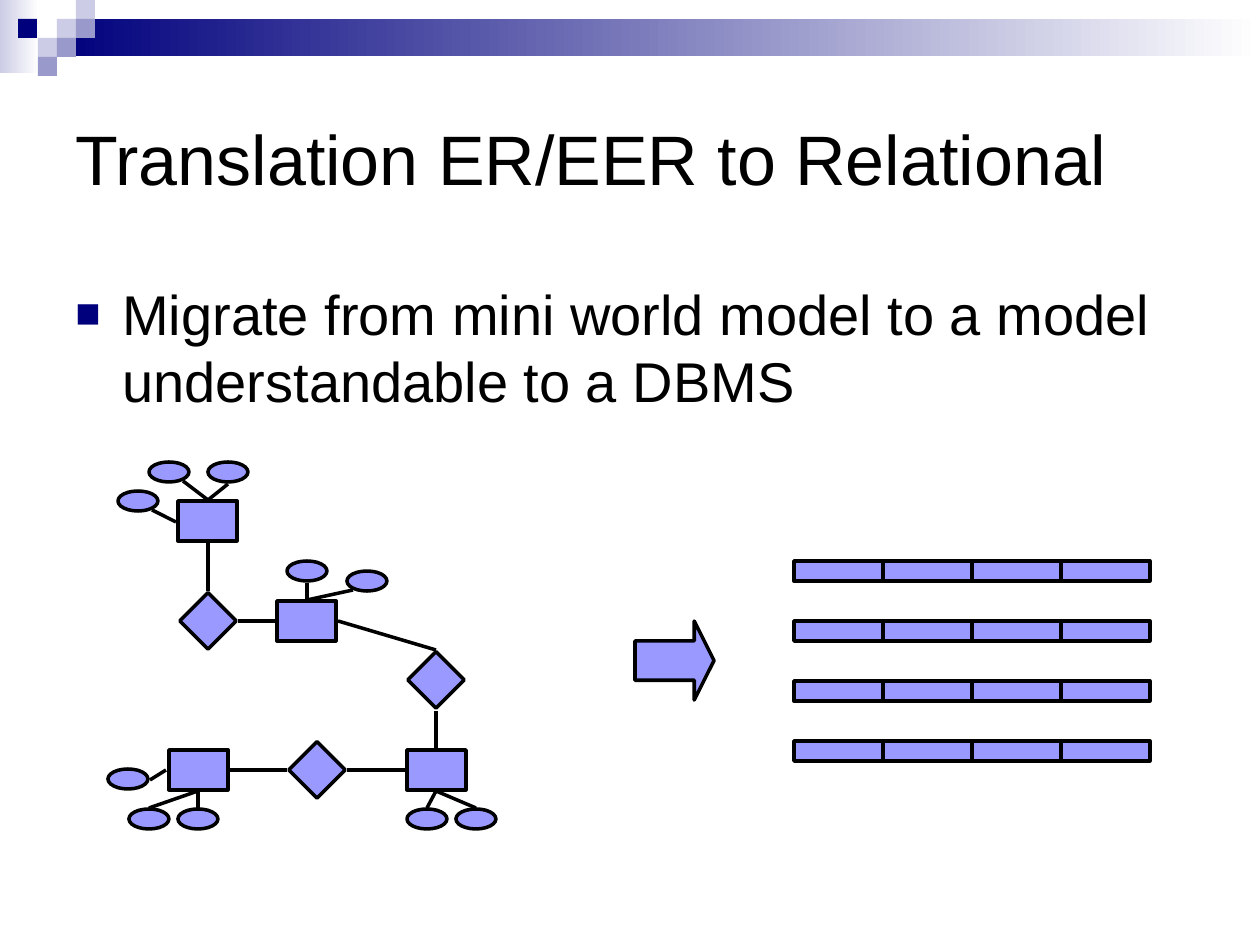
from typing import NamedTuple

from lxml.etree import SubElement
from pptx import Presentation
from pptx.dml.color import RGBColor
from pptx.enum.shapes import MSO_CONNECTOR, MSO_SHAPE
from pptx.enum.text import MSO_ANCHOR
from pptx.oxml.ns import qn
from pptx.util import Emu, Pt

PX_PER_INCH = 126
COLORS = {
    "navy": "00007D",
    "lavender": "CCCCE6",
    "violet": "9999CC",
    "node": "9999FF",
    "black": "000000",
    "white": "FFFFFF",
}


class Box(NamedTuple):
    left: int
    top: int
    width: int
    height: int


class Link(NamedTuple):
    x1: int
    y1: int
    x2: int
    y2: int


class Tile(NamedTuple):
    left: int
    top: int
    color: str


class Kind(NamedTuple):
    shape_type: MSO_SHAPE
    width: int
    height: int
    rotation: int
    corners: list[tuple[int, int]]


# Header mosaic
TILE_SIZE = 19
TILES = [
    Tile(57, 19, "lavender"),
    Tile(76, 0, "lavender"),
    Tile(76, 19, "violet"),
    Tile(38, 38, "lavender"),
    Tile(18, 19, "navy"),
    Tile(57, 38, "violet"),
    Tile(38, 57, "violet"),
]

# Entity-relationship diagram: entities, attributes, relationships
KINDS = [
    Kind(MSO_SHAPE.RECTANGLE, 59, 40, 0,
         [(178, 501), (277, 601), (407, 750), (169, 750)]),
    Kind(MSO_SHAPE.OVAL, 40, 20, 0,
         [(149, 462), (118, 491), (208, 462), (108, 769), (129, 809),
          (178, 809), (407, 809), (456, 809), (287, 561), (347, 571)]),
    Kind(MSO_SHAPE.RECTANGLE, 40, 40, 45,
         [(188, 601), (297, 750), (416, 660)]),
]
LINKS = [
    # Attribute to entity
    Link(150, 780, 166, 770),
    Link(149, 808, 198, 791),
    Link(198, 808, 198, 791),
    Link(152, 510, 176, 522),
    Link(183, 481, 208, 500),
    Link(228, 484, 208, 500),
    Link(307, 583, 307, 600),
    Link(353, 590, 307, 600),
    Link(427, 808, 436, 791),
    Link(476, 808, 436, 791),
    # Relationship to entity
    Link(208, 591, 208, 542),
    Link(238, 621, 277, 621),
    Link(287, 770, 228, 770),
    Link(347, 770, 407, 770),
    Link(436, 711, 436, 750),
    Link(436, 650, 338, 621),
]

# Relations: four rows of four columns
RELATION_LEFT, RELATION_TOP = 794, 561
COLUMN_WIDTH, ROW_HEIGHT, ROW_PITCH = 89, 20, 60
RELATION_COUNT = COLUMN_COUNT = 4


def px(length: int) -> Emu:
    return Emu(round(length * 914400 / PX_PER_INCH))


def color(name: str) -> RGBColor:
    return RGBColor.from_string(COLORS[name])


def add_box(slide, box: Box, fill: str, outlined: bool = False,
            shape_type: MSO_SHAPE = MSO_SHAPE.RECTANGLE):
    shape = slide.shapes.add_shape(shape_type, *map(px, box))
    shape.shadow.inherit = False
    shape.fill.solid()
    shape.fill.fore_color.rgb = color(fill)
    if outlined:
        shape.line.color.rgb = color("black")
        shape.line.width = Pt(2)
    else:
        shape.line.fill.background()
    return shape


def add_fading_box(slide, box: Box, start: str) -> None:
    fill = add_box(slide, box, start).fill
    fill.gradient()
    fill.gradient_angle = 0
    for stop, name, position in zip(fill.gradient_stops, (start, "white"), (0, 1)):
        stop.color.rgb = color(name)
        stop.position = position


def add_link(slide, link: Link) -> None:
    connector = slide.shapes.add_connector(MSO_CONNECTOR.STRAIGHT, *map(px, link))
    connector.line.color.rgb = color("black")
    connector.line.width = Pt(2)
    SubElement(connector._element.spPr, qn("a:effectLst"))


def add_text(slide, box: Box, text: str, size: int, anchor: MSO_ANCHOR):
    frame = slide.shapes.add_textbox(*map(px, box)).text_frame
    frame.word_wrap = True
    frame.vertical_anchor = anchor
    paragraph = frame.paragraphs[0]
    paragraph.text = text
    paragraph.font.name = "Arial"
    paragraph.font.size = Pt(size)
    paragraph.font.color.rgb = color("black")
    return paragraph


def add_square_bullet(paragraph, indent: int) -> None:
    properties = paragraph._p.get_or_add_pPr()
    properties.set("marL", str(px(indent)))
    properties.set("indent", str(-px(indent)))
    bullet = [
        ("a:buSzPct", {"val": "75000"}),
        ("a:buFont", {"typeface": "Arial"}),
        ("a:buChar", {"char": "■"}),
    ]
    defaults = properties.find(qn("a:defRPr"))
    bullet_color = SubElement(properties, qn("a:buClr"))
    SubElement(bullet_color, qn("a:srgbClr"), val=COLORS["navy"])
    for tag, attributes in bullet:
        SubElement(properties, qn(tag), attributes)
    properties.append(defaults)


def main() -> None:
    presentation = Presentation()
    presentation.slide_width, presentation.slide_height = px(1260), px(945)
    slide = presentation.slides.add_slide(presentation.slide_layouts[6])

    # Header
    add_fading_box(slide, Box(0, 0, 39, 73), "lavender")
    add_fading_box(slide, Box(57, 19, 1203, 37), "navy")
    for tile in TILES:
        add_box(slide, Box(tile.left, tile.top, TILE_SIZE, TILE_SIZE), tile.color)

    # Title and body
    add_text(slide, Box(63, 63, 1134, 189), "Translation ER/EER to Relational",
             40, MSO_ANCHOR.MIDDLE)
    body = add_text(slide, Box(63, 273, 1134, 536),
                    "Migrate from mini world model to a model understandable to a DBMS",
                    32, MSO_ANCHOR.TOP)
    body.space_before = Pt(3.6)
    add_square_bullet(body, 47)

    # Arrow from diagram to relations
    arrow = add_box(slide, Box(635, 621, 79, 79), "node", True, MSO_SHAPE.RIGHT_ARROW)
    arrow.adjustments[0], arrow.adjustments[1] = 0.5, 0.25

    # Diagram
    for kind in KINDS:
        for left, top in kind.corners:
            node = add_box(slide, Box(left, top, kind.width, kind.height),
                           "node", True, kind.shape_type)
            node.rotation = kind.rotation
    for link in LINKS:
        add_link(slide, link)

    # Relations
    for row in range(RELATION_COUNT):
        for column in range(COLUMN_COUNT):
            add_box(slide, Box(RELATION_LEFT + column * COLUMN_WIDTH,
                               RELATION_TOP + row * ROW_PITCH,
                               COLUMN_WIDTH, ROW_HEIGHT), "node", True)

    presentation.save("out.pptx")


if __name__ == "__main__":
    main()
